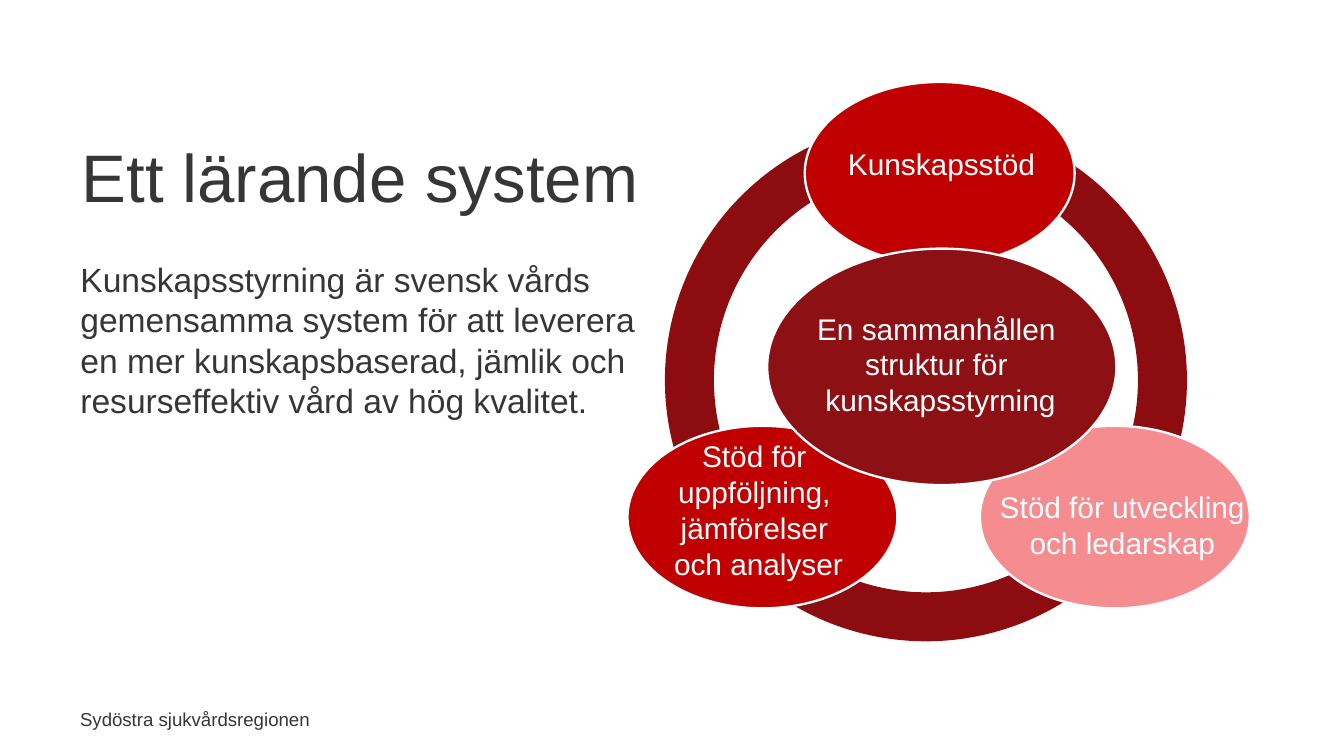
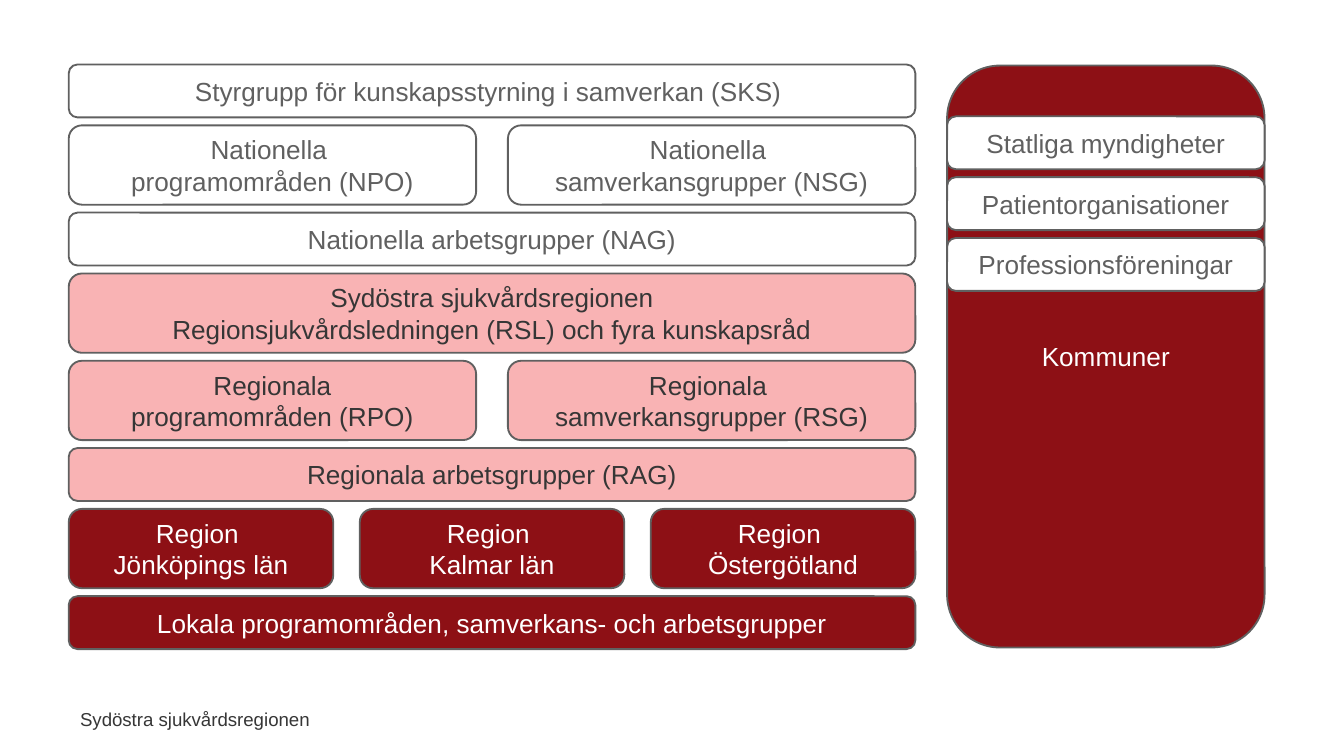
"""Builds two slides on the learning system and its knowledge governance structure."""
from dataclasses import dataclass
from typing import NamedTuple

from pptx import Presentation
from pptx.dml.color import RGBColor as Rgb
from pptx.enum.shapes import MSO_SHAPE as Shape
from pptx.enum.text import MSO_ANCHOR as Anchor, MSO_AUTO_SIZE as AutoSize, PP_ALIGN as Align
from pptx.util import Cm, Pt


@dataclass(frozen=True)
class Theme:
    font: str = "Arial"
    ink: str = "363636"
    grey: str = "606060"
    white: str = "FFFFFF"
    red: str = "C00000"
    ring: str = "8C0C0F"
    dark: str = "8D1015"
    rose: str = "F58C8F"
    pale: str = "F9B3B4"
    title_size: float = 36
    body_size: float = 18
    oval_size: float = 16
    block_size: float = 14
    footer_size: float = 10
    ring_line: float = 26.25
    oval_line: float = 1.25
    block_line: float = 1


THEME = Theme()


class Box(NamedTuple):
    left: float
    top: float
    width: float
    height: float

    def lengths(self) -> tuple:
        return tuple(Cm(value) for value in self)


class Oval(NamedTuple):
    box: Box
    fill: str


class Label(NamedTuple):
    box: Box
    paragraphs: tuple
    size: float = THEME.oval_size
    colour: str = THEME.white
    align: Align = Align.CENTER
    anchor: Anchor = Anchor.TOP
    wrap: bool = False
    grow: bool = True


class Look(NamedTuple):
    fill: str
    text: str


class Tier(NamedTuple):
    look: Look
    height: float
    blocks: tuple
    gap: float = 0


NATIONAL = Look(THEME.white, THEME.grey)
REGIONAL = Look(THEME.pale, THEME.ink)
LOCAL = Look(THEME.dark, THEME.white)
LOW, HIGH, ROW_GAP = 1.0, 1.5, 0.15

FOOTER = Label(Box(1.22, 13.26, 4.88, 0.69), ("Sydöstra sjukvårdsregionen",),
               THEME.footer_size, THEME.ink, Align.RIGHT)

RING = Box(13.03, 2.72, 8.94, 8.94)
OVALS = (
    Oval(Box(15.21, 1.55, 5.1, 3.45), THEME.red),
    Oval(Box(11.86, 8.05, 5.1, 3.45), THEME.red),
    Oval(Box(18.52, 8.05, 5.1, 3.45), THEME.rose),
    Oval(Box(14.5, 4.7, 6.6, 4.47), THEME.dark),
)
LABELS = (
    Label(Box(15.75, 2.62, 4.09, 0.94), ("Kunskapsstöd",)),
    Label(Box(18.52, 9.12, 5.38, 1.63), ("Stöd för utveckling och ledarskap",), wrap=True),
    Label(Box(12.47, 8.15, 3.73, 3.0),
          ("Stöd för ", "uppföljning, ", "jämförelser ", "och analyser")),
    Label(Box(15.16, 5.74, 5.23, 2.31),
          ("En sammanhållen ", "struktur för ", "kunskapsstyrning")),
    Label(Box(1.3, 2.13, 22.86, 2.39), ("Ett lärande system",), THEME.title_size,
          THEME.ink, Align.LEFT, Anchor.MIDDLE, True, False),
    Label(Box(1.27, 4.77, 11.2, 7.8),
          ("Kunskapsstyrning är svensk vårds gemensamma system för att leverera en mer "
           "kunskapsbaserad, jämlik och resurseffektiv vård av hög kvalitet.",),
          THEME.body_size, THEME.ink, Align.LEFT, Anchor.TOP, True, False),
)

STRUCTURE = Box(1.3, 1.22, 16.0, 11.05)
TIERS = (
    Tier(NATIONAL, LOW, (("Styrgrupp för kunskapsstyrning i samverkan (SKS) ",),)),
    Tier(NATIONAL, HIGH, (("Nationella ", "programområden (NPO)"),
                          ("Nationella ", "samverkansgrupper (NSG)")), 0.6),
    Tier(NATIONAL, LOW, (("Nationella arbetsgrupper (NAG)",),)),
    Tier(REGIONAL, HIGH, (("Sydöstra sjukvårdsregionen",
                           "Regionsjukvårdsledningen (RSL) och fyra kunskapsråd"),)),
    Tier(REGIONAL, HIGH, (("Regionala\nprogramområden (RPO)",),
                          ("Regionala \nsamverkansgrupper (RSG)",)), 0.6),
    Tier(REGIONAL, LOW, (("Regionala arbetsgrupper (RAG)",),)),
    Tier(LOCAL, HIGH, (("Region \nJönköpings län",), ("Region \nKalmar län",),
                       ("Region \nÖstergötland",)), 0.5),
    Tier(LOCAL, LOW, (("Lokala programområden, samverkans- och arbetsgrupper",),)),
)
MUNICIPALITIES = Box(17.9, 1.24, 6.0, 11.0)
PARTNERS_TOP = 2.2
PARTNERS = tuple(Tier(NATIONAL, LOW, ((name,),)) for name in
                 ("Statliga myndigheter", "Patientorganisationer", "Professionsföreningar"))


def write(frame, paragraphs: tuple, size: float, colour: str, align: Align) -> None:
    """Writes paragraphs run by run, with a line break at each newline."""
    for number, content in enumerate(paragraphs):
        paragraph = frame.add_paragraph() if number else frame.paragraphs[0]
        paragraph.alignment = align
        for position, line in enumerate(content.split("\n")):
            if position:
                paragraph.add_line_break()
            run = paragraph.add_run()
            run.text = line
            run.font.name = THEME.font
            run.font.size = Pt(size)
            run.font.color.rgb = Rgb.from_string(colour)


def draw_label(slide, label: Label) -> None:
    frame = slide.shapes.add_textbox(*label.box.lengths()).text_frame
    frame.word_wrap = label.wrap
    frame.auto_size = AutoSize.SHAPE_TO_FIT_TEXT if label.grow else AutoSize.NONE
    frame.vertical_anchor = label.anchor
    write(frame, label.paragraphs, label.size, label.colour, label.align)


def draw_shape(slide, kind: Shape, box: Box, fill: str | None, line: str, weight: float):
    shape = slide.shapes.add_shape(kind, *box.lengths())
    shape.shadow.inherit = False
    if fill:
        shape.fill.solid()
        shape.fill.fore_color.rgb = Rgb.from_string(fill)
    else:
        shape.fill.background()
    shape.line.color.rgb = Rgb.from_string(line)
    shape.line.width = Pt(weight)
    return shape


def draw_block(slide, box: Box, look: Look, paragraphs: tuple) -> None:
    block = draw_shape(slide, Shape.ROUNDED_RECTANGLE, box, look.fill,
                       THEME.grey, THEME.block_line)
    frame = block.text_frame
    frame.word_wrap = True
    frame.vertical_anchor = Anchor.MIDDLE
    write(frame, paragraphs, THEME.block_size, look.text, Align.CENTER)


def draw_tiers(slide, tiers: tuple, left: float, top: float, width: float) -> None:
    """Stacks tiers downwards and shares each tier's width among its blocks."""
    for tier in tiers:
        count = len(tier.blocks)
        share = (width - tier.gap * (count - 1)) / count
        for column, paragraphs in enumerate(tier.blocks):
            box = Box(left + column * (share + tier.gap), top, share, tier.height)
            draw_block(slide, box, tier.look, paragraphs)
        top += tier.height + ROW_GAP


def add_slide(deck):
    slide = deck.slides.add_slide(deck.slide_layouts[6])
    draw_label(slide, FOOTER)
    return slide


def build_learning_system(deck) -> None:
    slide = add_slide(deck)
    draw_shape(slide, Shape.FLOWCHART_CONNECTOR, RING, None, THEME.ring, THEME.ring_line)
    for oval in OVALS:
        draw_shape(slide, Shape.OVAL, oval.box, oval.fill, THEME.white, THEME.oval_line)
    for label in LABELS:
        draw_label(slide, label)


def build_structure(deck) -> None:
    slide = add_slide(deck)
    draw_block(slide, MUNICIPALITIES, LOCAL, ("Kommuner",))
    draw_tiers(slide, PARTNERS, MUNICIPALITIES.left, PARTNERS_TOP, MUNICIPALITIES.width)
    draw_tiers(slide, TIERS, STRUCTURE.left, STRUCTURE.top, STRUCTURE.width)


def main() -> None:
    deck = Presentation()
    deck.slide_width, deck.slide_height = Cm(25.4), Cm(14.29)
    build_learning_system(deck)
    build_structure(deck)
    deck.save("out.pptx")


if __name__ == "__main__":
    main()
